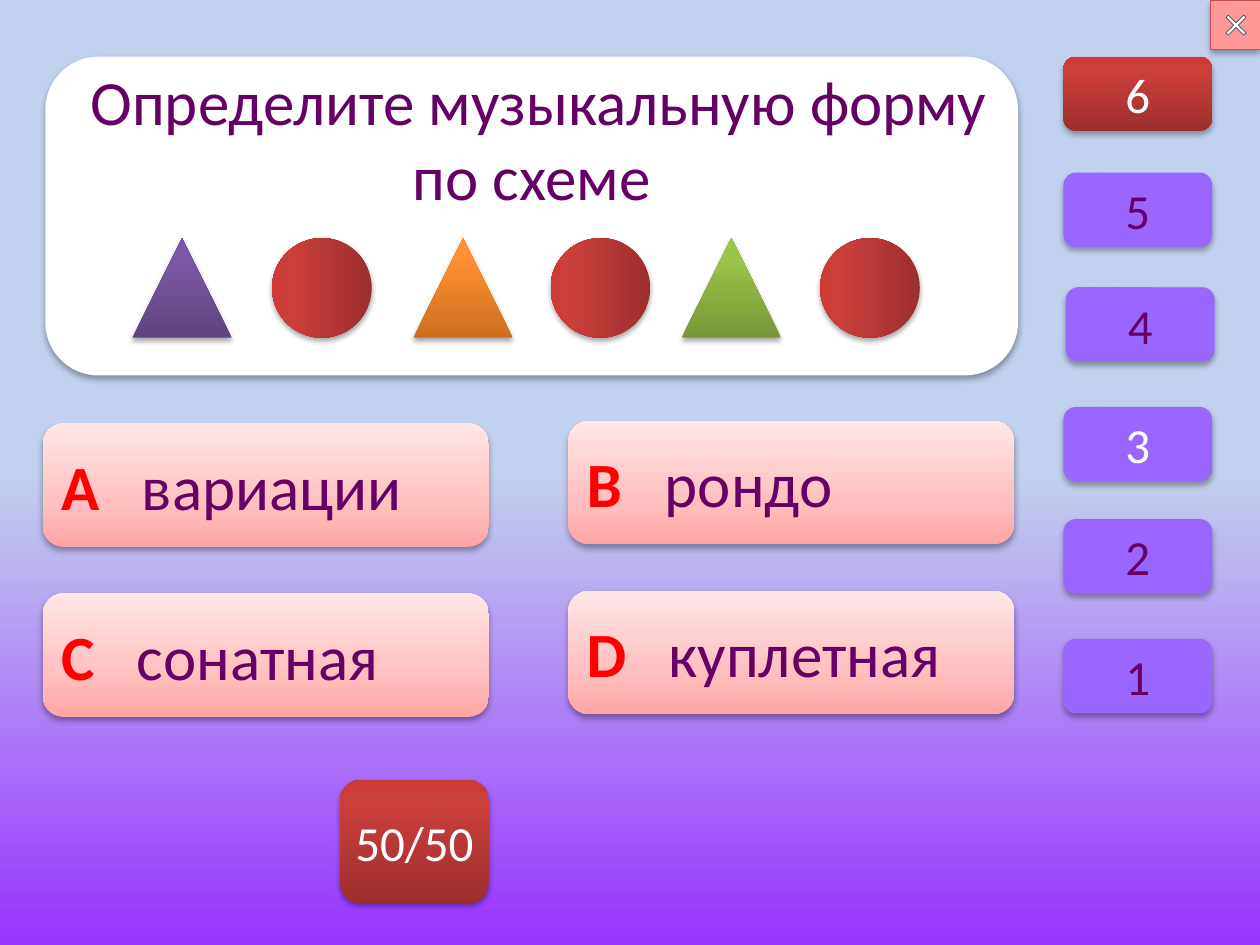
import copy

import lxml.etree
import pptx
import pptx.dml.color
import pptx.enum.shapes
import pptx.enum.text
import pptx.oxml
import pptx.oxml.ns
import pptx.util

Inches = pptx.util.Inches
Pt = pptx.util.Pt
RGBColor = pptx.dml.color.RGBColor
SHAPE = pptx.enum.shapes.MSO_SHAPE
ANCHOR = pptx.enum.text.MSO_ANCHOR
ALIGN = pptx.enum.text.PP_ALIGN
qn = pptx.oxml.ns.qn

WHITE = RGBColor(0xFF, 0xFF, 0xFF)
PLUM = RGBColor(0x66, 0x00, 0x66)
RED = RGBColor(0xFF, 0x00, 0x00)
VIOLET = RGBColor(0x99, 0x66, 0xFF)
SALMON = RGBColor(0xFF, 0x99, 0x99)
GRAY = RGBColor(0x5F, 0x5F, 0x5F)
BRICK = RGBColor(0xC0, 0x50, 0x4D)

BACKDROP = [(0, RGBColor(0x99, 0x33, 0xFF)), (0.5, RGBColor(0xC2, 0xD1, 0xED))]
PINK_BLEND = [(0, RGBColor(0xFF, 0xA6, 0xA5)), (0.35, RGBColor(0xFF, 0xC0, 0xBF)), (1, RGBColor(0xFF, 0xE7, 0xE7))]
RED_BLEND = [(0, RGBColor(0x9C, 0x2F, 0x2D)), (0.8, RGBColor(0xCB, 0x3E, 0x3A)), (1, RGBColor(0xCE, 0x3B, 0x37))]
GREEN_BLEND = [(0, RGBColor(0x77, 0x97, 0x37)), (0.8, RGBColor(0x9B, 0xC3, 0x48)), (1, RGBColor(0x9D, 0xC7, 0x46))]
ORANGE_BLEND = [(0, RGBColor(0xCC, 0x6E, 0x20)), (0.8, RGBColor(0xFF, 0x90, 0x34)), (1, RGBColor(0xFF, 0x91, 0x36))]
PURPLE_BLEND = [(0, RGBColor(0x5F, 0x44, 0x80)), (0.8, RGBColor(0x7B, 0x58, 0xA6)), (1, RGBColor(0x7C, 0x57, 0xA8))]

SOFT = (32, 3.5, 2.2)
CRISP = (35, 3.1, 1.8)


def paint(fill, element, colors):
    if colors is None:
        fill.background()
    elif isinstance(colors, RGBColor):
        fill.solid()
        fill.fore_color.rgb = colors
    else:
        fill.gradient()
        fill.gradient_angle = 90
        stop_list = next(element.iter(qn("a:gsLst")))
        while len(stop_list) < len(colors):
            stop_list.append(copy.deepcopy(stop_list[0]))
        for stop, (position, color) in zip(fill.gradient_stops, colors):
            stop.position = position
            stop.color.rgb = color


def add_figure(shapes, kind, box, colors, shadow=None, runs=(), size=28, align=ALIGN.CENTER):
    shape = shapes.add_shape(kind, *[Inches(value) for value in box])
    shape.shadow.inherit = False
    paint(shape.fill, shape._element, colors)
    shape.line.fill.background()
    if shadow:
        alpha, blur, distance = shadow
        effects = shape._element.spPr.find(qn("a:effectLst"))
        outer = lxml.etree.SubElement(
            effects, qn("a:outerShdw"), blurRad=str(Pt(blur)), dist=str(Pt(distance)), dir="5400000", rotWithShape="0")
        color = lxml.etree.SubElement(outer, qn("a:srgbClr"), val="000000")
        lxml.etree.SubElement(color, qn("a:alpha"), val=str(alpha * 1000))
    frame = shape.text_frame
    frame.word_wrap = False
    frame.vertical_anchor = ANCHOR.MIDDLE
    frame.paragraphs[0].alignment = align
    for text, color, bold in runs:
        run = frame.paragraphs[0].add_run()
        run.text = text
        run.font.color.rgb = color
        for name, value in {"name": "Calibri", "size": Pt(size), "bold": bold}.items():
            setattr(run.font, name, value)
    return shape


presentation = pptx.Presentation()
presentation.slide_width = Inches(10)
presentation.slide_height = Inches(7.5)
slide = presentation.slides.add_slide(presentation.slide_layouts[6])
shapes = slide.shapes
background = slide.background.fill
paint(background, slide._element, BACKDROP)

close_box = (9.61, 0, 0.39, 0.39)
add_figure(shapes, SHAPE.ACTION_BUTTON_CUSTOM, close_box, SALMON, SOFT)
cross = add_figure(shapes, SHAPE.CROSS, (9.71, 0.1, 0.2, 0.2), WHITE)
cross.rotation = 45
cross.adjustments[0] = 0.435
close_frame = add_figure(shapes, SHAPE.ACTION_BUTTON_CUSTOM, close_box, None)
for shape, color in ((cross, GRAY), (close_frame, BRICK)):
    shape.line.color.rgb = color
    shape.line.width = Pt(0.5)

answers = [
    ("D", "куплетная", 4.51, 4.69, 0.65),
    ("C", "сонатная", 0.34, 4.71, 0.6),
    ("В", "рондо", 4.51, 3.34, 0.62),
    ("А", "вариации", 0.34, 3.36, 0.64),
]
for letter, answer, left, top, tab in answers:
    shape = add_figure(
        shapes, SHAPE.ROUNDED_RECTANGLE, (left, top, 3.54, 0.98), PINK_BLEND, SOFT,
        [(letter + "\t", RED, True), (answer, PLUM, False)], 36, ALIGN.LEFT)
    properties = shape.text_frame.paragraphs[0]._p.get_or_add_pPr()
    tabs = lxml.etree.SubElement(properties, qn("a:tabLst"))
    lxml.etree.SubElement(tabs, qn("a:tab"), pos=str(Inches(tab)), algn="l")

add_figure(shapes, SHAPE.ROUNDED_RECTANGLE, (2.7, 6.19, 1.18, 0.98), RED_BLEND, CRISP, [("50/50", WHITE, False)])

levels = [
    ("1", 8.44, 5.07, VIOLET, PLUM),
    ("6", 8.44, 0.45, RED_BLEND, WHITE),
    ("5", 8.44, 1.37, VIOLET, PLUM),
    ("4", 8.46, 2.28, VIOLET, PLUM),
    ("3", 8.44, 3.23, VIOLET, WHITE),
    ("2", 8.44, 4.12, VIOLET, PLUM),
]
for number, left, top, colors, text_color in levels:
    add_figure(
        shapes, SHAPE.ROUNDED_RECTANGLE, (left, top, 1.18, 0.59), colors, SOFT, [(number, text_color, False)])

question_group = shapes.add_group_shape()
question = add_figure(
    question_group.shapes, SHAPE.ROUNDED_RECTANGLE, (0.36, 0.45, 7.72, 2.53), WHITE, SOFT,
    [(" Определите музыкальную форму по схеме", PLUM, False)], 36)
question_format = {"word_wrap": True, "vertical_anchor": ANCHOR.TOP, "margin_top": Inches(-0.08)}
for name, value in question_format.items():
    setattr(question.text_frame, name, value)

figures = [
    (SHAPE.ISOSCELES_TRIANGLE, 5.41, GREEN_BLEND, 0),
    (SHAPE.ISOSCELES_TRIANGLE, 3.28, ORANGE_BLEND, 0),
    (SHAPE.ISOSCELES_TRIANGLE, 1.05, PURPLE_BLEND, 0),
    (SHAPE.OVAL, 6.51, RED_BLEND, 270),
    (SHAPE.OVAL, 4.37, RED_BLEND, 270),
    (SHAPE.OVAL, 2.16, RED_BLEND, 270),
]
for kind, left, colors, rotation in figures:
    shape = add_figure(question_group.shapes, kind, (left, 1.89, 0.79, 0.79), colors, CRISP)
    shape.rotation = rotation

presentation.save("out.pptx")
